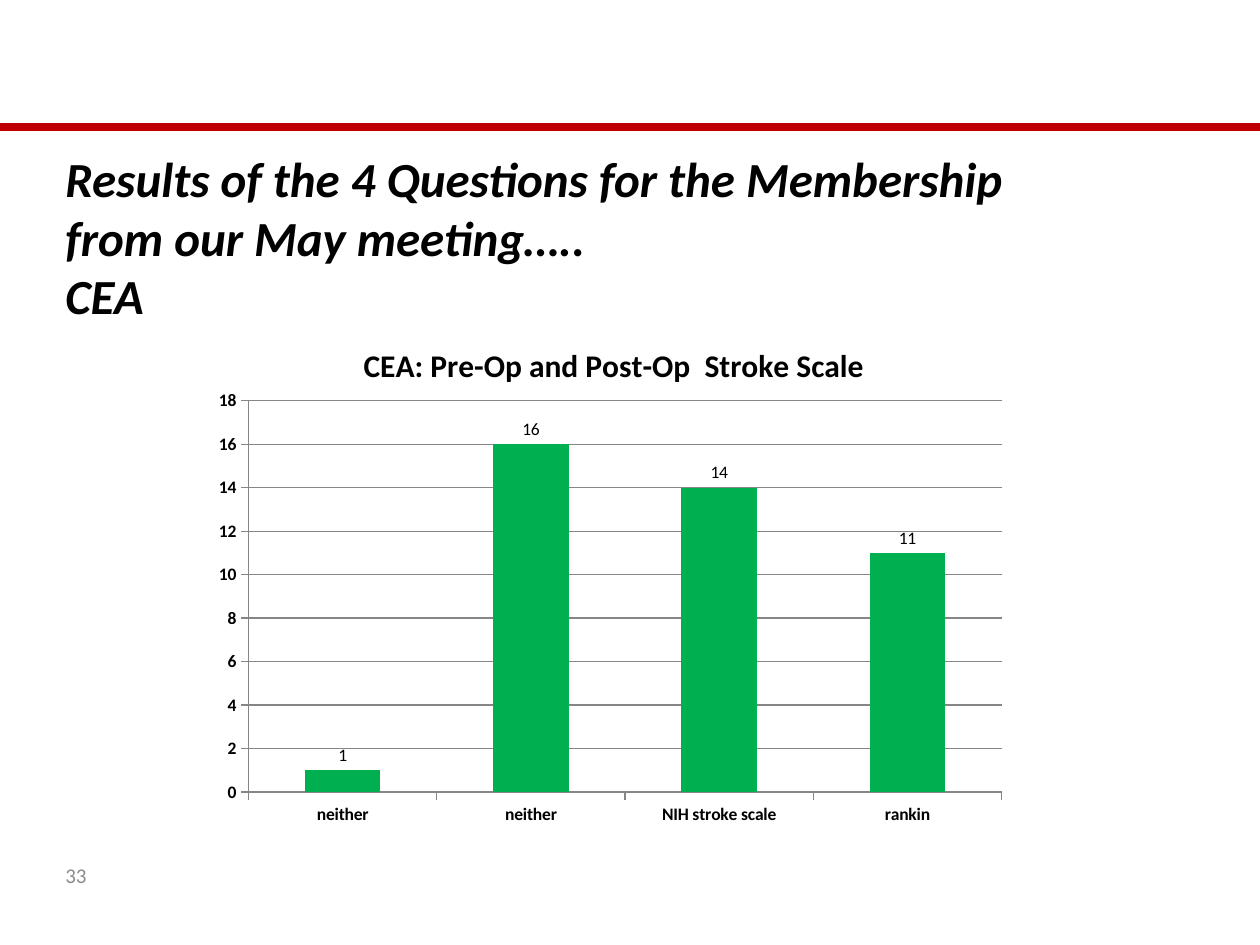
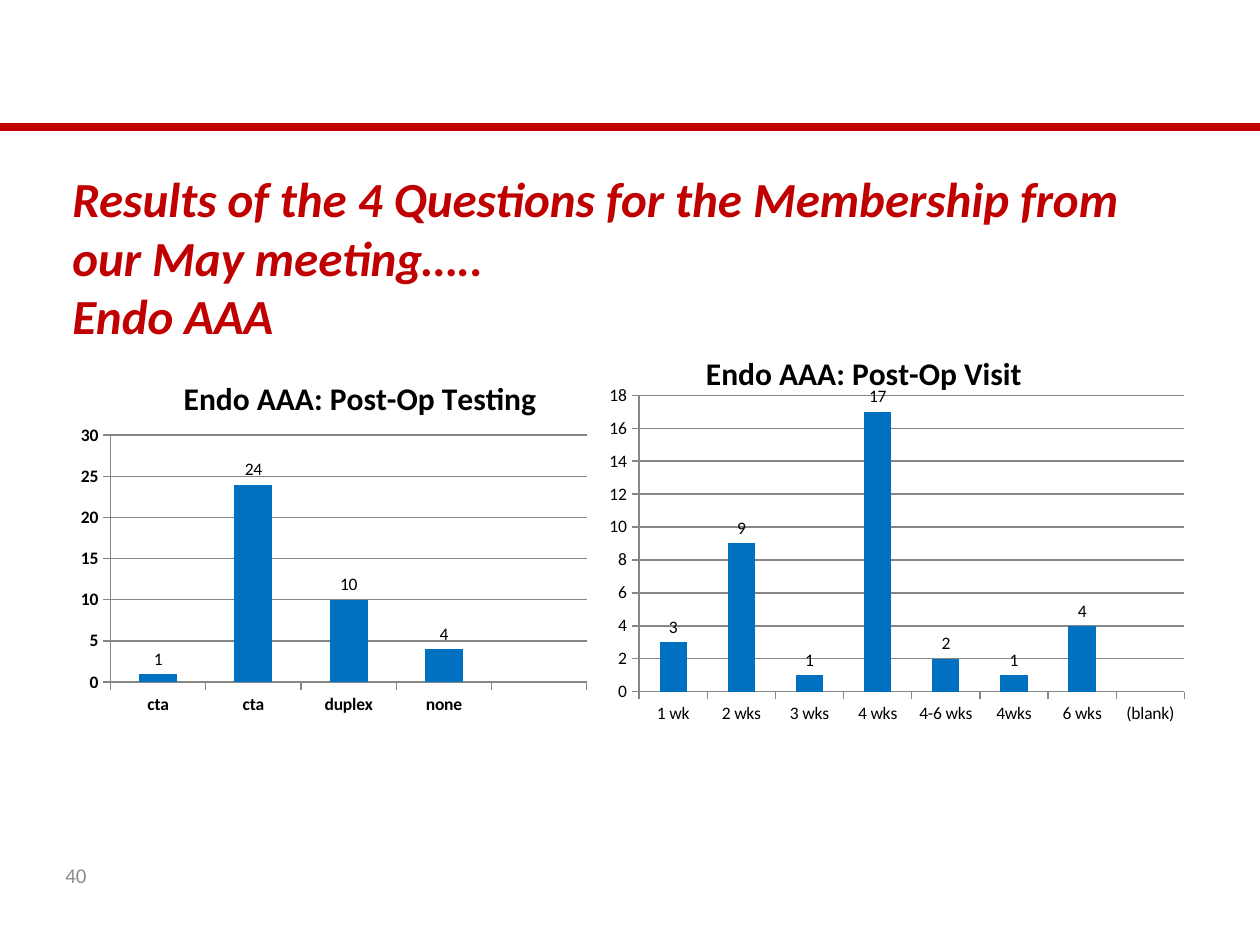
from lxml import etree
from pptx import Presentation
from pptx import util as u
from pptx.chart.data import CategoryChartData
from pptx.dml.color import RGBColor
from pptx.enum import chart as ch, shapes, text
from pptx.oxml.ns import qn

PX = u.Inches(1) / 126
COLORS = {"red": "C00000", "black": "000000", "grey": "8C8C8C",
          "grid": "868686", "green": "00B050", "blue": "0070C0"}
QUESTION = "Results of the 4 Questions for the Membership from our May meeting….."


def px(*lengths):
    """Turn pixel lengths into EMU."""
    return [u.Emu(round(n * PX)) for n in lengths]


class Deck:
    """Style of the presentation and its current slide."""

    def __init__(self, width, height):
        self.prs = Presentation()
        self.width = width
        self.prs.slide_width, self.prs.slide_height = px(width, height)

    def color(self, name):
        """Return the colour of that name."""
        return RGBColor.from_string(COLORS[name])

    def font(self, font, color="black", **values):
        """Apply the shared typeface, a colour and other font values."""
        for key, value in {"name": "Calibri", **values}.items():
            setattr(font, key, value)
        font.color.rgb = self.color(color)

    def slide(self, number):
        """Start a slide with its band and number."""
        self.s = self.prs.slides.add_slide(self.prs.slide_layouts[6])
        self.band(127)
        self.text([str(number)], (53, 850, 284, 50), text.MSO_ANCHOR.MIDDLE,
                  color="grey", size=u.Pt(12))

    def band(self, y):
        """Draw the red rule across the slide."""
        line = self.s.shapes.add_connector(
            shapes.MSO_CONNECTOR.STRAIGHT, *px(0, y, self.width, y))
        line.line.color.rgb = self.color("red")
        line.line.width = u.Pt(5)
        etree.SubElement(line.element.spPr, qn("a:effectLst"))

    def text(self, lines, box, anchor=text.MSO_ANCHOR.TOP, **style):
        """Add a wrapped text box with one paragraph per line."""
        tf = self.s.shapes.add_textbox(*px(*box)).text_frame
        tf.word_wrap = True
        tf.vertical_anchor = anchor
        for i, line in enumerate(lines):
            p = tf.paragraphs[0] if i == 0 else tf.add_paragraph()
            r = p.add_run()
            r.text = line
            self.font(r.font, **style)

    def title(self, topic, box, color):
        """Add the question heading with its topic."""
        self.text([QUESTION, topic], box, color=color,
                  size=u.Pt(28), bold=True, italic=True)

    def place(self, element, index, **fractions):
        """Give a chart part a manual layout in fractions of the chart."""
        for old in element.findall(qn("c:layout")):
            element.remove(old)
        layout = etree.Element(qn("c:layout"))
        manual = etree.SubElement(layout, qn("c:manualLayout"))
        values = {"xMode": "edge", "yMode": "edge", **fractions}
        if "w" in fractions:
            values = {"layoutTarget": "inner", **values}
        for key, value in values.items():
            etree.SubElement(manual, qn(f"c:{key}")).set("val", str(value))
        element.insert(index, layout)

    def axis(self, axis, bold):
        """Style the line, ticks and labels of an axis."""
        axis.major_tick_mark = ch.XL_TICK_MARK.OUTSIDE
        axis.format.line.color.rgb = self.color("grid")
        self.font(axis.tick_labels.font, size=u.Pt(10), bold=bold)

    def columns(self, title, data, box, plot, title_at, top, step, color, bold=True):
        """Add a titled column chart with value labels."""
        cd = CategoryChartData()
        cd.categories = [name for name, _ in data]
        cd.add_series("Series 1", [value for _, value in data])
        chart = self.s.shapes.add_chart(
            ch.XL_CHART_TYPE.COLUMN_CLUSTERED, *px(*box), cd).chart
        self.font(chart.font, size=u.Pt(10))
        chart.has_legend = False
        chart.has_title = True
        p = chart.chart_title.text_frame.paragraphs[0]
        r = p.add_run()
        r.text = title
        self.font(r.font, size=u.Pt(18), bold=True)

        value_axis = chart.value_axis
        for axis in (chart.category_axis, value_axis):
            self.axis(axis, bold)
        for key, value in {"minimum_scale": 0, "maximum_scale": top,
                           "major_unit": step, "has_major_gridlines": True}.items():
            setattr(value_axis, key, value)
        value_axis.major_gridlines.format.line.color.rgb = self.color("grid")

        bars = chart.plots[0]
        for key, value in {"gap_width": 150, "vary_by_categories": False,
                           "has_data_labels": True}.items():
            setattr(bars, key, value)
        bars.data_labels.show_value = True
        bars.data_labels.position = ch.XL_LABEL_POSITION.OUTSIDE_END
        self.font(bars.data_labels.font, size=u.Pt(10))
        fill = bars.series[0].format.fill
        fill.solid()
        fill.fore_color.rgb = self.color(color)

        root = chart.element if hasattr(chart, "element") else chart._chartSpace
        self.place(root.find(".//" + qn("c:title")), 1, **dict(zip("xy", title_at)))
        self.place(root.find(".//" + qn("c:plotArea")), 0, **dict(zip("xywh", plot)))


def main():
    """Build the two result slides."""
    deck = Deck(1260, 945)

    deck.slide(33)
    deck.columns("CEA: Pre-Op and Post-Op  Stroke Scale",
                 [("neither", 1), ("neither", 16), ("NIH stroke scale", 14), ("rankin", 11)],
                 box=(203, 312, 815, 522), plot=(0.056, 0.17, 0.924, 0.75),
                 title_at=(0.19, 0.05), top=18, step=2, color="green")
    deck.title("CEA", (53, 142, 965, 251), "black")

    deck.slide(40)
    deck.columns("Endo AAA: Post-Op Testing",
                 [("cta", 1), ("cta", 24), ("duplex", 10), ("none", 4), ("", None)],
                 box=(63, 343, 548, 394), plot=(0.087, 0.234, 0.869, 0.627),
                 title_at=(0.21, 0.07), top=30, step=5, color="blue")
    deck.columns("Endo AAA: Post-Op Visit",
                 [("1 wk", 3), ("2 wks", 9), ("3 wks", 1), ("4 wks", 17),
                  ("4-6 wks", 2), ("4wks", 1), ("6 wks", 4), ("(blank)", None)],
                 box=(588, 320, 624, 430), plot=(0.082, 0.175, 0.874, 0.69),
                 title_at=(0.18, 0.06), top=18, step=2, color="blue", bold=False)
    deck.title("Endo AAA", (60, 162, 1148, 190), "red")

    deck.prs.save("out.pptx")


if __name__ == "__main__":
    main()
